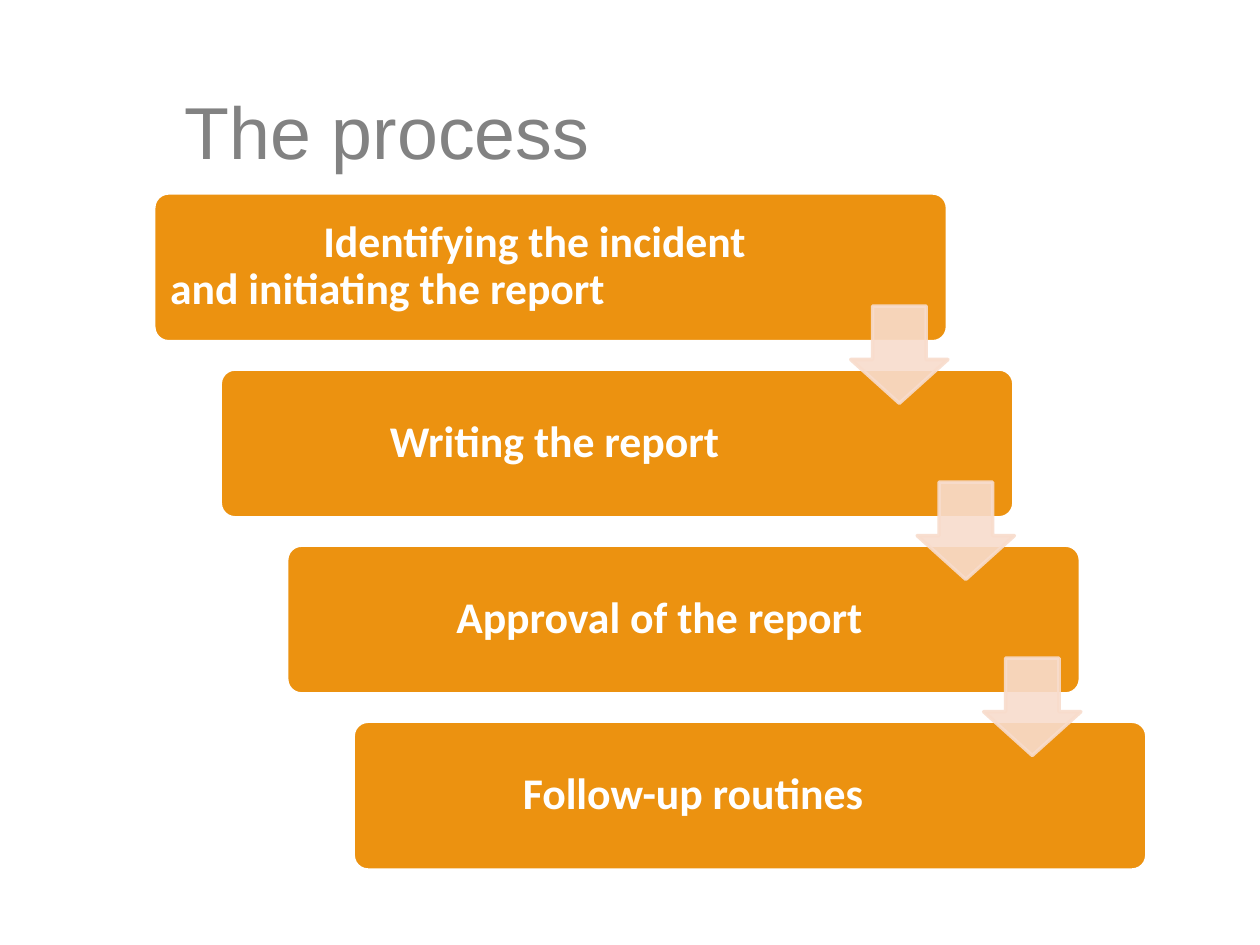
from typing import NamedTuple

from lxml.etree import SubElement
from pptx import Presentation
from pptx.dml.color import RGBColor
from pptx.enum.shapes import MSO_SHAPE as Preset
from pptx.enum.text import MSO_ANCHOR as Anchor
from pptx.oxml.ns import qn
from pptx.util import Cm, Pt

COLORS = {"title": "828282", "step": "EC9210", "arrow": "F8DCCC", "white": "FFFFFF"}
STEPS = (
    "\tIdentifying the incident \tand initiating the report",
    "\tWriting the report",
    "\tApproval of the report",
    "\tFollow-up routines",
)
STEP_RIGHT, STEP_DOWN = 1.34, 3.55


class Box(NamedTuple):
    left: float
    top: float
    width: float
    height: float

    def at_step(self, index: int) -> "Box":
        """Return this box moved down the staircase."""
        return self._replace(left=self.left + index * STEP_RIGHT,
                             top=self.top + index * STEP_DOWN)

    def lengths(self) -> list:
        """Return position and size as slide lengths."""
        return [Cm(value) for value in self]


TITLE = Box(3.48, 1.04, 20.65, 3.18)
CARD = Box(3.1, 3.89, 16, 3)
LABEL = Box(3.18, 3.97, 12.52, 2.82)
ARROW = Box(17.15, 6.17, 1.96, 1.96)


def add_text(slide, box: Box, text: str, *, font: str, size: float, color: str,
             bold: bool = False, line_spacing: float = 1.0,
             inset: float = 0.25, tab_size: float = 2.54) -> None:
    """Add a wrapped, vertically centred text box."""
    frame = slide.shapes.add_textbox(*box.lengths()).text_frame
    frame.word_wrap = True
    frame.vertical_anchor = Anchor.MIDDLE
    frame.margin_left = frame.margin_right = Cm(inset)
    frame.margin_top = frame.margin_bottom = Cm(inset)
    paragraph = frame.paragraphs[0]
    paragraph._p.get_or_add_pPr().set("defTabSz", str(Cm(tab_size)))
    paragraph.line_spacing = line_spacing
    run = paragraph.add_run()
    run.text = text
    run.font.name, run.font.size, run.font.bold = font, Pt(size), bold
    run.font.color.rgb = RGBColor.from_string(COLORS[color])


def add_preset(slide, preset: Preset, box: Box, adjustments: tuple, *,
               fill: str, line: str, opacity: int = 100) -> None:
    """Add a flat preset shape with a 2 pt outline."""
    shape = slide.shapes.add_shape(preset, *box.lengths())
    shape.shadow.inherit = False
    for index, value in enumerate(adjustments):
        shape.adjustments[index] = value
    shape.fill.solid()
    shape.fill.fore_color.rgb = RGBColor.from_string(COLORS[fill])
    shape.line.color.rgb = RGBColor.from_string(COLORS[line])
    shape.line.width = Pt(2)
    if opacity < 100:
        for color in shape._element.spPr.iter(qn("a:srgbClr")):
            SubElement(color, qn("a:alpha"), val=str(opacity * 1000))


def main() -> None:
    """Build the process slide."""
    presentation = Presentation()
    presentation.slide_width, presentation.slide_height = Cm(25.4), Cm(19.05)
    slide = presentation.slides.add_slide(presentation.slide_layouts[6])
    add_text(slide, TITLE, "The process", font="Arial", size=42, color="title")
    for index, text in enumerate(STEPS):
        add_preset(slide, Preset.ROUNDED_RECTANGLE, CARD.at_step(index), (0.1,),
                   fill="step", line="white")
        add_text(slide, LABEL.at_step(index), text, font="Calibri", size=25,
                 color="white", bold=True, line_spacing=0.9, tab_size=3.09)
    for index in range(len(STEPS) - 1):
        add_preset(slide, Preset.DOWN_ARROW, ARROW.at_step(index), (0.55, 0.45),
                   fill="arrow", line="arrow", opacity=90)
    presentation.save("out.pptx")


if __name__ == "__main__":
    main()
